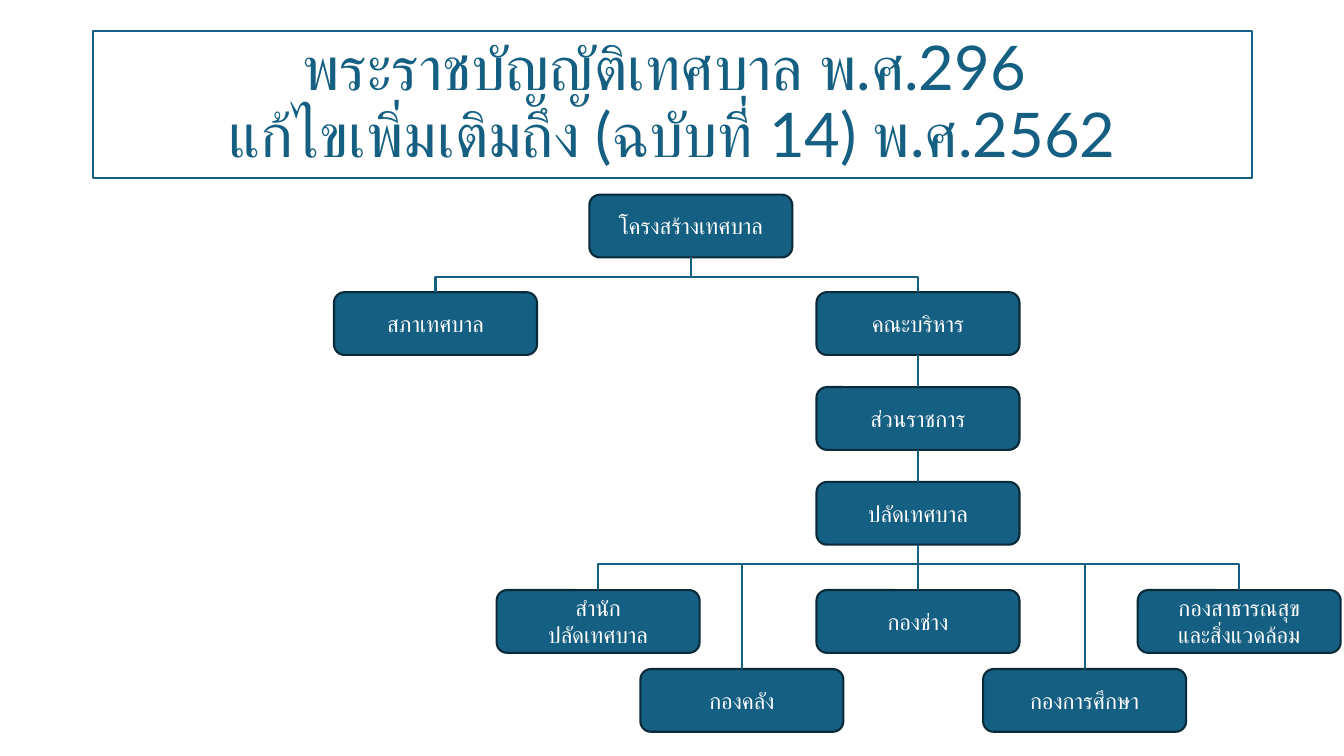
from dataclasses import dataclass

from lxml.etree import SubElement
from pptx import Presentation
from pptx.dml.color import RGBColor
from pptx.enum.shapes import MSO_CONNECTOR, MSO_SHAPE
from pptx.enum.text import MSO_ANCHOR, PP_ALIGN
from pptx.oxml.ns import qn
from pptx.util import Inches, Pt


@dataclass(frozen=True)
class Theme:
    teal: RGBColor = RGBColor(0x15, 0x60, 0x82)
    edge: RGBColor = RGBColor(0x09, 0x2A, 0x39)
    white: RGBColor = RGBColor(0xFF, 0xFF, 0xFF)
    font: str = "Lato"
    title_size: Pt = Pt(44)
    box_size: Pt = Pt(16)
    line_width: Pt = Pt(1.5)


@dataclass(frozen=True)
class Unit:
    """A box of the chart; centre and top are percentages of the slide."""
    label: str
    centre: float
    top: float

    @property
    def head(self):
        return self.centre, self.top

    @property
    def foot(self):
        return self.centre, self.top + BOX_HEIGHT


BOX_WIDTH, BOX_HEIGHT = 15.1, 8.3
FIRST_ROW, ROW_STEP = 38.65, 12.55
COUNCIL_BUS, DIVISION_BUS = 36.7, 74.65
UPPER_ROW, LOWER_ROW = 78.05, 88.5
EXECUTIVE_AXIS = 68.3


class OrgSlide:
    def __init__(self, deck, theme):
        self.theme = theme
        self.width, self.height = deck.slide_width, deck.slide_height
        self.slide = deck.slides.add_slide(deck.slide_layouts[6])

    def x(self, share):
        return round(self.width * share / 100)

    def y(self, share):
        return round(self.height * share / 100)

    def panel(self, preset, area, fill, edge):
        left, top, width, height = area
        shape = self.slide.shapes.add_shape(
            preset, self.x(left), self.y(top), self.x(width), self.y(height))
        shape.shadow.inherit = False
        shape.fill.solid()
        shape.fill.fore_color.rgb = fill
        shape.line.color.rgb = edge
        shape.line.width = self.theme.line_width
        shape.text_frame.word_wrap = True
        shape.text_frame.vertical_anchor = MSO_ANCHOR.MIDDLE
        return shape.text_frame

    def add_words(self, paragraph, text, size, color):
        run = paragraph.add_run()
        run.text = text
        run.font.color.rgb = color
        for name, value in {"name": self.theme.font, "size": size}.items():
            setattr(run.font, name, value)
        SubElement(run.font._element, qn("a:cs"), typeface=self.theme.font)

    def title(self, lines, area):
        theme = self.theme
        frame = self.panel(MSO_SHAPE.RECTANGLE, area, theme.white, theme.teal)
        heading = frame.paragraphs[0]
        layout = {"alignment": PP_ALIGN.CENTER, "line_spacing": 0.9}
        for name, value in layout.items():
            setattr(heading, name, value)
        for number, line in enumerate(lines):
            if number:
                heading.add_line_break()
            self.add_words(heading, line, theme.title_size, theme.teal)

    def box(self, unit):
        theme = self.theme
        area = (unit.centre - BOX_WIDTH / 2, unit.top, BOX_WIDTH, BOX_HEIGHT)
        frame = self.panel(MSO_SHAPE.ROUNDED_RECTANGLE, area, theme.teal, theme.edge)
        for number, line in enumerate(unit.label.split("\n")):
            paragraph = frame.add_paragraph() if number else frame.paragraphs[0]
            paragraph.alignment = PP_ALIGN.CENTER
            self.add_words(paragraph, line, theme.box_size, theme.white)

    def link(self, start, end, kind=MSO_CONNECTOR.STRAIGHT):
        connector = self.slide.shapes.add_connector(
            kind, self.x(start[0]), self.y(start[1]), self.x(end[0]), self.y(end[1]))
        connector.line.color.rgb = self.theme.teal
        connector.line.width = self.theme.line_width
        SubElement(connector._element.spPr, qn("a:effectLst"))
        return connector

    def branch(self, parent, child, bus):
        """Elbow that leaves the parent downwards and turns at height bus."""
        start, end = parent.foot, child.head
        connector = self.link(start, end, MSO_CONNECTOR.ELBOW)
        across, down = connector.width, connector.height
        connector.left += (across - down) // 2
        connector.top += (down - across) // 2
        connector.width, connector.height = down, across
        rightward = end[0] > start[0]
        xfrm = connector._element.spPr.find(qn("a:xfrm"))
        xfrm.set("rot", str((270 if rightward else 90) * 60000))
        xfrm.set("flipH", str(int(rightward)))
        turn = round((bus - start[1]) / (end[1] - start[1]) * 100000)
        guides = connector._element.spPr.find(qn("a:prstGeom")).find(qn("a:avLst"))
        SubElement(guides, qn("a:gd"), name="adj1", fmla=f"val {turn}")


def main():
    deck = Presentation()
    deck.slide_width, deck.slide_height = Inches(13.33), Inches(7.5)
    chart = OrgSlide(deck, Theme())
    chart.title(["พระราชบัญญัติเทศบาล พ.ศ.296 ",
                 "แก้ไขเพิ่มเติมถึง (ฉบับที่ 14) พ.ศ.2562"], (6.9, 4.1, 86.25, 19.4))

    municipality = Unit("โครงสร้างเทศบาล", 51.4, 25.75)
    council = Unit("สภาเทศบาล", 32.4, FIRST_ROW)
    executive, services, clerk = chain = [
        Unit(label, EXECUTIVE_AXIS, FIRST_ROW + level * ROW_STEP)
        for level, label in enumerate(["คณะบริหาร", "ส่วนราชการ", "ปลัดเทศบาล"])]
    office = Unit("สำนัก\nปลัดเทศบาล", 44.5, UPPER_ROW)
    finance = Unit("กองคลัง", 55.2, LOWER_ROW)
    works = Unit("กองช่าง", EXECUTIVE_AXIS, UPPER_ROW)
    education = Unit("กองการศึกษา", 80.7, LOWER_ROW)
    health = Unit("กองสาธารณสุข\nและสิ่งแวดล้อม", 92.2, UPPER_ROW)

    for unit in [municipality, council, *chain, office, finance, works, education, health]:
        chart.box(unit)
    for child in (council, executive):
        chart.branch(municipality, child, COUNCIL_BUS)
    for parent, child in zip(chain, [services, clerk, works]):
        chart.link(parent.foot, child.head)
    for division in (office, health):
        chart.branch(clerk, division, DIVISION_BUS)
    for division in (finance, education):
        chart.link((division.centre, DIVISION_BUS), division.head)
    deck.save("out.pptx")


if __name__ == "__main__":
    main()
